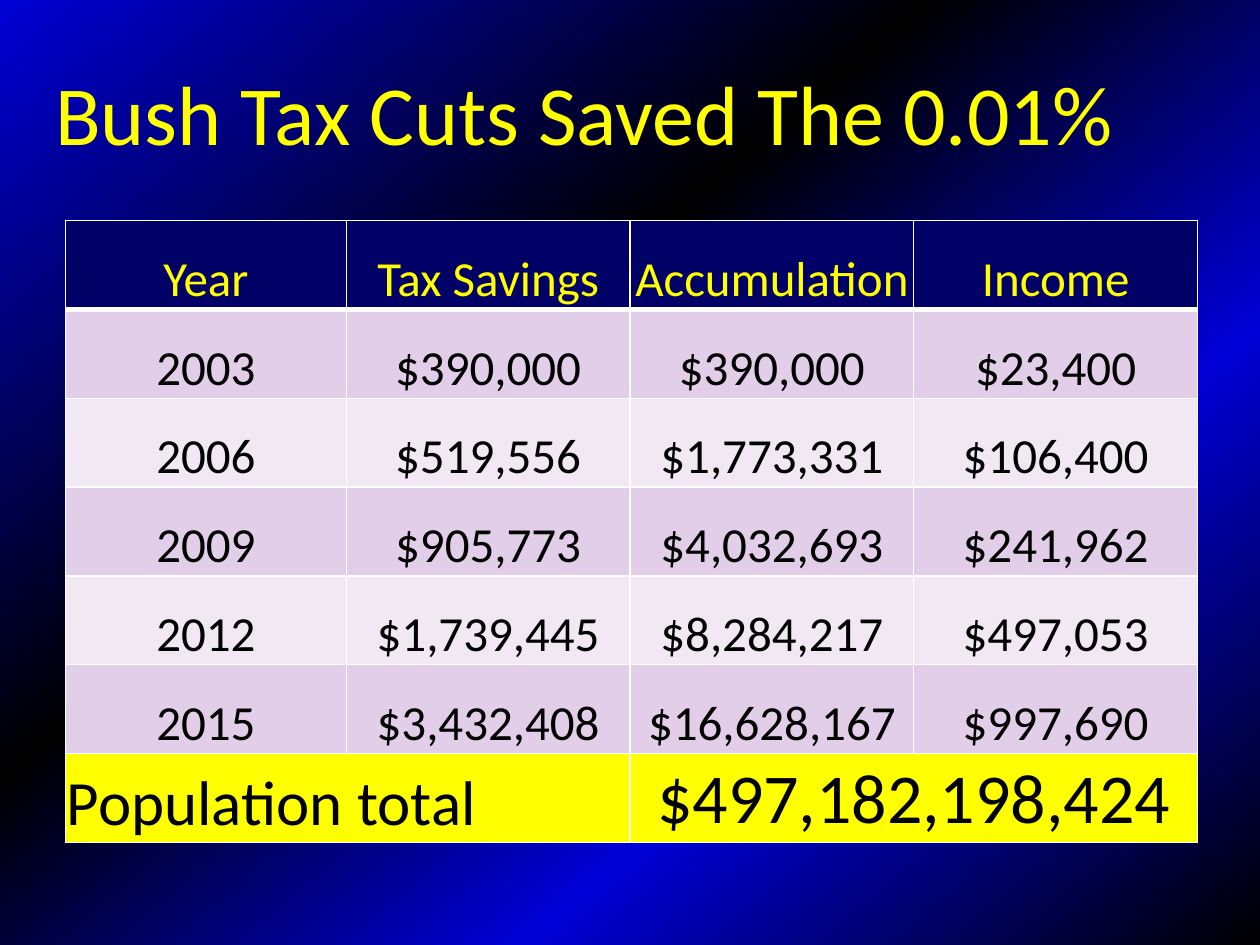
from lxml.etree import SubElement
from pptx import Presentation
from pptx.dml.color import RGBColor
from pptx.enum.text import MSO_ANCHOR, PP_ALIGN
from pptx.oxml.ns import qn
from pptx.util import Cm, Pt

FONT = "Calibri"
YELLOW, WHITE, BLACK = "FFFF00", "FFFFFF", "000000"
NAVY, BANDS = "000066", ("E3CEE9", "F1E8F4")
GRADIENT = [(0, "0000D6"), (39, BLACK), (69, "0000D6"), (100, BLACK)]

COL_WIDTHS = (5.66, 5.72, 5.72, 5.72)
ROW_HEIGHT = 1.79
ROWS = [
    ("Year", "Tax Savings", "Accumulation", "Income"),
    ("2003", "$390,000", "$390,000", "$23,400"),
    ("2006", "$519,556", "$1,773,331", "$106,400"),
    ("2009", "$905,773", "$4,032,693", "$241,962"),
    ("2012", "$1,739,445", "$8,284,217", "$497,053"),
    ("2015", "$3,432,408", "$16,628,167", "$997,690"),
]


def rgb(value):
    return RGBColor.from_string(value)


def set_background(s):
    fill = s.background.fill
    fill.gradient()
    fill.gradient_angle = 310
    stops = next(s.element.iter(qn("a:gsLst")))
    for stop in list(stops):
        stops.remove(stop)
    for position, color in GRADIENT:
        stop = SubElement(stops, qn("a:gs"), pos=str(position * 1000))
        SubElement(stop, qn("a:srgbClr"), val=color)


def format_text(p, size, color, align=PP_ALIGN.LEFT):
    p.alignment = align
    for r in p.runs:
        r.font.name = FONT
        r.font.size = Pt(size)
        r.font.bold = False
        r.font.color.rgb = rgb(color)


def add_text_shadow(r):
    fill = r.font.color and r.font._element.find(qn("a:solidFill"))
    effects = SubElement(r.font._element, qn("a:effectLst"))
    fill.addnext(effects)
    shadow = SubElement(effects, qn("a:outerShdw"), blurRad="38100",
                        dist="38100", dir="2700000", algn="tl")
    SubElement(shadow, qn("a:srgbClr"), val=BLACK)


def add_title(s, text):
    sp = s.shapes.add_textbox(Cm(0.86), Cm(0.79), Cm(23.75), Cm(2.92))
    tf = sp.text_frame
    tf.word_wrap = True
    tf.vertical_anchor = MSO_ANCHOR.MIDDLE
    tf.text = text
    p = tf.paragraphs[0]
    format_text(p, 48, YELLOW)
    add_text_shadow(p.runs[0])


def set_borders(cell, top=1, bottom=1):
    tc_pr = cell._tc.get_or_add_tcPr()
    for side, width in (("L", 1), ("R", 1), ("T", top), ("B", bottom)):
        ln = SubElement(tc_pr, qn(f"a:ln{side}"), w=str(Pt(width)))
        color = SubElement(SubElement(ln, qn("a:solidFill")), qn("a:srgbClr"))
        color.set("val", WHITE)


def style_cell(cell, fill, top=1, bottom=1):
    cell.margin_left = cell.margin_right = cell.margin_top = Cm(0.03)
    cell.margin_bottom = 0
    cell.vertical_anchor = MSO_ANCHOR.BOTTOM
    set_borders(cell, top, bottom)
    cell.fill.solid()
    cell.fill.fore_color.rgb = rgb(fill)


def write_cell(cell, text, size, color, align=PP_ALIGN.CENTER):
    cell.text = text
    format_text(cell.text_frame.paragraphs[0], size, color, align)


def add_savings_table(s):
    total_row = len(ROWS)
    frame = s.shapes.add_table(total_row + 1, len(COL_WIDTHS), Cm(1.32), Cm(4.45),
                               Cm(sum(COL_WIDTHS)), Cm(ROW_HEIGHT * (total_row + 1)))
    table = frame.table
    table.first_row = table.horz_banding = False
    for column, width in zip(table.columns, COL_WIDTHS):
        column.width = Cm(width)
    for row in table.rows:
        row.height = Cm(ROW_HEIGHT)

    for i, values in enumerate(ROWS):
        header = i == 0
        fill = NAVY if header else BANDS[(i - 1) % 2]
        for j, value in enumerate(values):
            cell = table.cell(i, j)
            style_cell(cell, fill, top=3 if i == 1 else 1, bottom=3 if header else 1)
            write_cell(cell, value, 28, YELLOW if header else BLACK)

    for j in range(len(COL_WIDTHS)):
        style_cell(table.cell(total_row, j), YELLOW)
    label, amount = table.cell(total_row, 0), table.cell(total_row, 2)
    label.merge(table.cell(total_row, 1))
    amount.merge(table.cell(total_row, 3))
    write_cell(label, "Population total", 36, BLACK, PP_ALIGN.LEFT)
    write_cell(amount, "$497,182,198,424", 40, BLACK)


def main():
    prs = Presentation()
    prs.slide_width, prs.slide_height = Cm(25.4), Cm(19.05)
    s = prs.slides.add_slide(prs.slide_layouts[6])
    set_background(s)
    add_title(s, "Bush Tax Cuts Saved The 0.01%")
    add_savings_table(s)
    prs.save("out.pptx")


if __name__ == "__main__":
    main()
